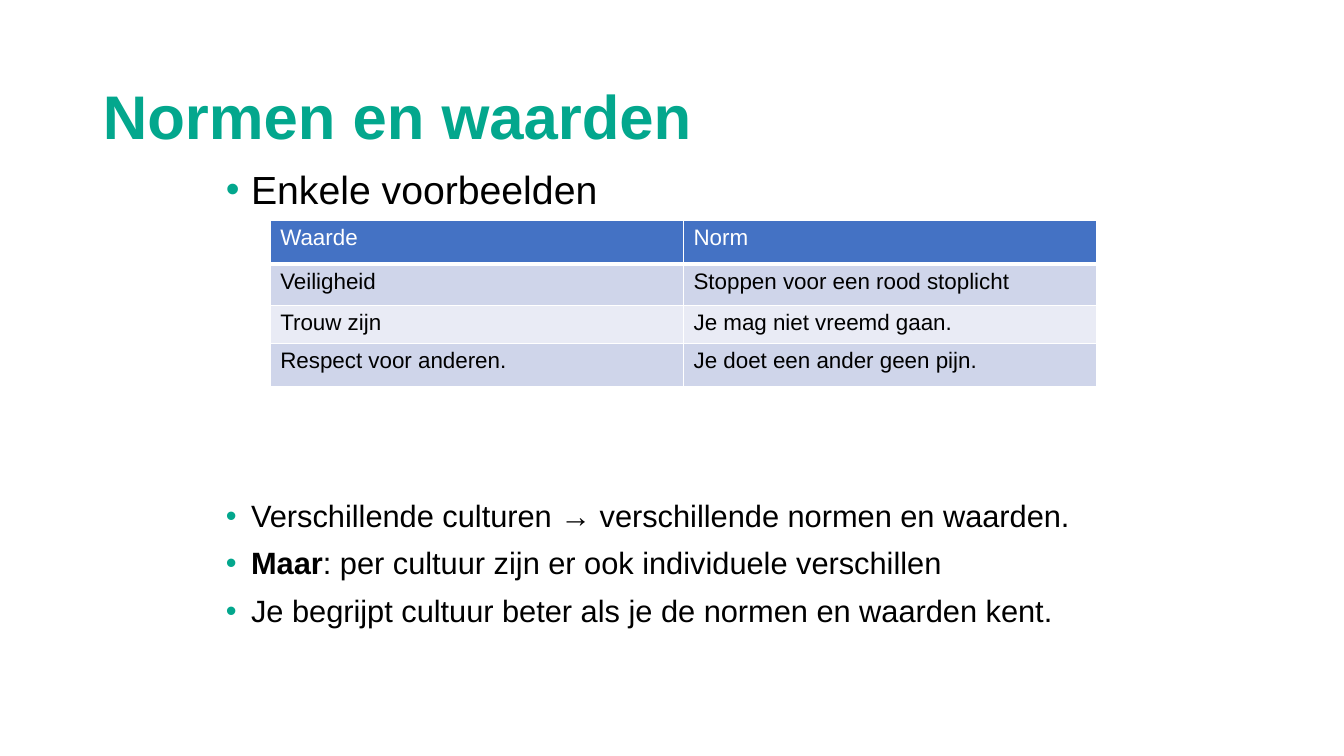
from lxml import etree
from pptx import Presentation
from pptx.dml.color import RGBColor
from pptx.enum.text import MSO_ANCHOR, MSO_AUTO_SIZE, PP_ALIGN
from pptx.oxml.ns import qn
from pptx.util import Inches, Pt

TOP, MIDDLE = MSO_ANCHOR.TOP, MSO_ANCHOR.MIDDLE
LEFT = PP_ALIGN.LEFT
NO_AUTOFIT = MSO_AUTO_SIZE.NONE

GREEN = RGBColor(0x03, 0xA7, 0x8D)
BLACK = RGBColor(0, 0, 0)
WHITE = RGBColor(0xFF, 0xFF, 0xFF)
HEADER_BLUE = RGBColor(0x44, 0x72, 0xC4)
BANDS = [RGBColor(0xE9, 0xEB, 0xF5), RGBColor(0xCF, 0xD5, 0xEA)]


def set_font(font, size, color, bold=False):
    values = {"name": "Arial", "size": Pt(size), "bold": bold}
    for name, value in values.items():
        setattr(font, name, value)
    font.color.rgb = color


def place(shape, left, top, width, height, anchor):
    values = {"left": left, "top": top, "width": width, "height": height}
    for name, value in values.items():
        setattr(shape, name, Inches(value))
    frame = shape.text_frame
    frame.word_wrap = True
    frame.auto_size = NO_AUTOFIT
    frame.vertical_anchor = anchor
    return frame


deck = Presentation()
deck.slide_width, deck.slide_height = Inches(13.33), Inches(7.5)
page = deck.slides.add_slide(deck.slide_layouts[1])

body = place(page.placeholders[1], 2.14, 1.64, 9, 4.95, TOP)
bullets = [
    (28, 0, [("Enkele voorbeelden", False)]),
    (22, 206, [("Verschillende culturen → verschillende normen en waarden.", False)]),
    (22, 10, [("Maar", True), (": per cultuur zijn er ook individuele verschillen", False)]),
    (22, 10, [("Je begrijpt cultuur beter als je de normen en waarden kent.", False)]),
]
for index, (size, gap, spans) in enumerate(bullets):
    para = body.add_paragraph() if index else body.paragraphs[0]
    para.line_spacing = 0.9
    para.space_before = Pt(gap)
    properties = para._p.get_or_add_pPr()
    properties.set("marL", str(Inches(0.25)))
    properties.set("indent", str(-Inches(0.25)))
    bullet_color = etree.SubElement(properties, qn("a:buClr"))
    etree.SubElement(bullet_color, qn("a:srgbClr"), val=str(GREEN))
    etree.SubElement(properties, qn("a:buFont"), typeface="Arial")
    etree.SubElement(properties, qn("a:buChar"), char="•")
    for text, bold in spans:
        span = para.add_run()
        span.text = text
        set_font(span.font, size, BLACK, bold)

heading = place(page.shapes.title, 0.92, 0.79, 11.5, 0.79, MIDDLE)
heading.text = "Normen en waarden"
heading_para = heading.paragraphs[0]
heading_para.alignment = LEFT
heading_para.line_spacing = 0.9
set_font(heading_para.runs[0].font, 44, GREEN, True)

examples = [
    ("Waarde", "Norm"),
    ("Veiligheid", "Stoppen voor een rood stoplicht"),
    ("Trouw zijn", "Je mag niet vreemd gaan."),
    ("Respect voor anderen.", "Je doet een ander geen pijn."),
]
row_heights = [0.43, 0.41, 0.38, 0.43]
table = page.shapes.add_table(
    len(examples), 2, Inches(2.68), Inches(2.19), Inches(8.2), Inches(sum(row_heights))
).table
for row, (texts, height) in enumerate(zip(examples, row_heights)):
    table.rows[row].height = Inches(height)
    for column, text in enumerate(texts):
        cell = table.cell(row, column)
        cell.text = text
        set_font(cell.text_frame.paragraphs[0].runs[0].font, 16, BLACK if row else WHITE)
        cell_properties = cell._tc.get_or_add_tcPr()
        for side in ("lnL", "lnR", "lnT", "lnB"):
            weight = 3 if row == 0 and side == "lnB" else 1
            border = etree.SubElement(cell_properties, qn(f"a:{side}"), w=str(Pt(weight)))
            fill = etree.SubElement(border, qn("a:solidFill"))
            etree.SubElement(fill, qn("a:srgbClr"), val=str(WHITE))
        cell.fill.solid()
        cell.fill.fore_color.rgb = BANDS[row % 2] if row else HEADER_BLUE

deck.save("out.pptx")
